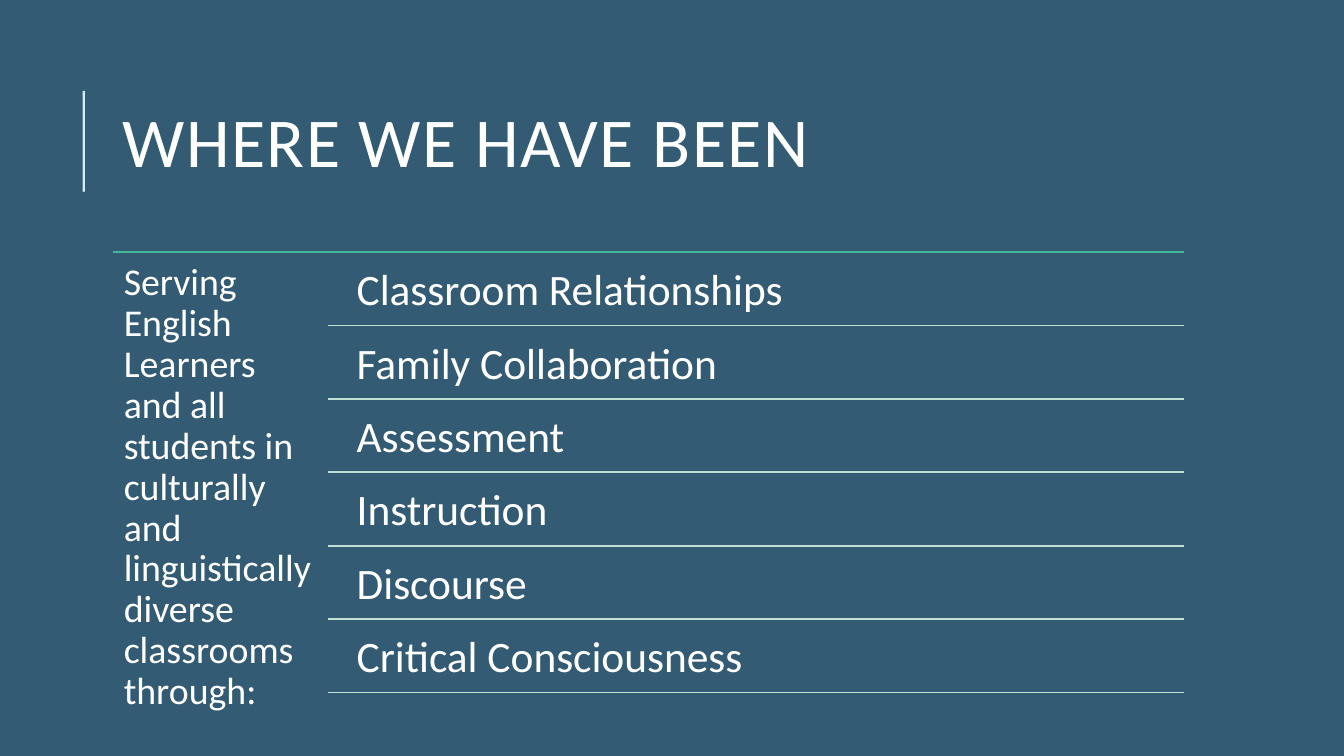
from dataclasses import dataclass

from lxml.etree import SubElement
from pptx import Presentation
from pptx.dml.color import RGBColor
from pptx.enum.shapes import MSO_CONNECTOR
from pptx.enum.text import MSO_ANCHOR
from pptx.oxml.ns import qn
from pptx.util import Cm, Pt


@dataclass(frozen=True)
class Theme:
    font: str = "Calibri"
    background: str = "335B74"
    text: str = "FFFFFF"
    accent: str = "1CADE4"
    top_rule: str = "42BA97"
    row_rule: str = "C0E0D3"
    title_size: int = 50
    topic_size: int = 31
    intro_size: int = 27


THEME = Theme()

TITLE = "WHERE WE HAVE BEEN"
INTRO = ("Serving English Learners and all students in culturally and "
         "linguistically diverse classrooms through:")
TOPICS = ["Classroom Relationships", "Family Collaboration", "Assessment",
          "Instruction", "Discourse", "Critical Consciousness"]

# Layout in centimetres
LEFT, RIGHT = 2.84, 29.85
BAR_X, BAR_TOP, BAR_BOTTOM = 2.11, 2.29, 4.83
LIST_TOP, ROW_PITCH = 6.35, 1.85
RULE_LEFT, TOPIC_LEFT = 8.26, 8.66


def add_text(page, text, left, top, width, height, size, inset,
             line_spacing=0.9, anchor=MSO_ANCHOR.TOP):
    box = page.shapes.add_textbox(Cm(left), Cm(top), Cm(width), Cm(height))
    frame = box.text_frame
    frame.word_wrap = True
    frame.vertical_anchor = anchor
    frame.margin_left = frame.margin_right = Cm(inset)
    frame.margin_top = frame.margin_bottom = Cm(inset)
    frame.text = text
    para = frame.paragraphs[0]
    para.line_spacing = line_spacing
    span = para.runs[0]
    span.font.name = THEME.font
    span.font.size = Pt(size)
    span.font.color.rgb = RGBColor.from_string(THEME.text)
    return span


def add_rule(page, x1, y1, x2, y2, color, weight, opacity=100):
    rule = page.shapes.add_connector(
        MSO_CONNECTOR.STRAIGHT, Cm(x1), Cm(y1), Cm(x2), Cm(y2))
    rule.line.color.rgb = RGBColor.from_string(color)
    rule.line.width = Pt(weight)
    properties = rule.element.spPr
    if opacity < 100:
        shade = properties.find(".//" + qn("a:srgbClr"))
        SubElement(shade, qn("a:alpha"), val=str(opacity * 1000))
    SubElement(properties, qn("a:effectLst"))


def add_heading(page):
    bar = (BAR_X, BAR_BOTTOM, BAR_X, BAR_TOP)
    add_rule(page, *bar, THEME.accent, 1.5)
    span = add_text(page, TITLE, LEFT, 1.63, RIGHT - LEFT, 4.17,
                    THEME.title_size, 0.25, 0.8, MSO_ANCHOR.MIDDLE)
    span.font._element.set("spc", "100")  # letter spacing of 1 pt
    add_rule(page, *bar, THEME.text, 1.5, opacity=80)


def add_topic(page, index, topic):
    top = LIST_TOP + 0.08 + index * ROW_PITCH
    add_text(page, topic, TOPIC_LEFT, top, RIGHT - TOPIC_LEFT, 1.75,
             THEME.topic_size, 0.33)
    rule_y = top + 1.77
    add_rule(page, RULE_LEFT, rule_y, RIGHT, rule_y, THEME.row_rule, 1.25)


def main():
    deck = Presentation()
    deck.slide_width, deck.slide_height = Cm(33.87), Cm(19.05)
    page = deck.slides.add_slide(deck.slide_layouts[6])
    fill = page.background.fill
    fill.solid()
    fill.fore_color.rgb = RGBColor.from_string(THEME.background)

    # Title with its side bar
    add_heading(page)

    # Introduction under the top rule
    add_rule(page, LEFT, LIST_TOP, RIGHT, LIST_TOP, THEME.top_rule, 0.75)
    add_text(page, INTRO, LEFT, LIST_TOP, 5.41, 11.18, THEME.intro_size, 0.28)

    # Topic rows
    for index, topic in enumerate(TOPICS):
        add_topic(page, index, topic)

    deck.save("out.pptx")


if __name__ == "__main__":
    main()
